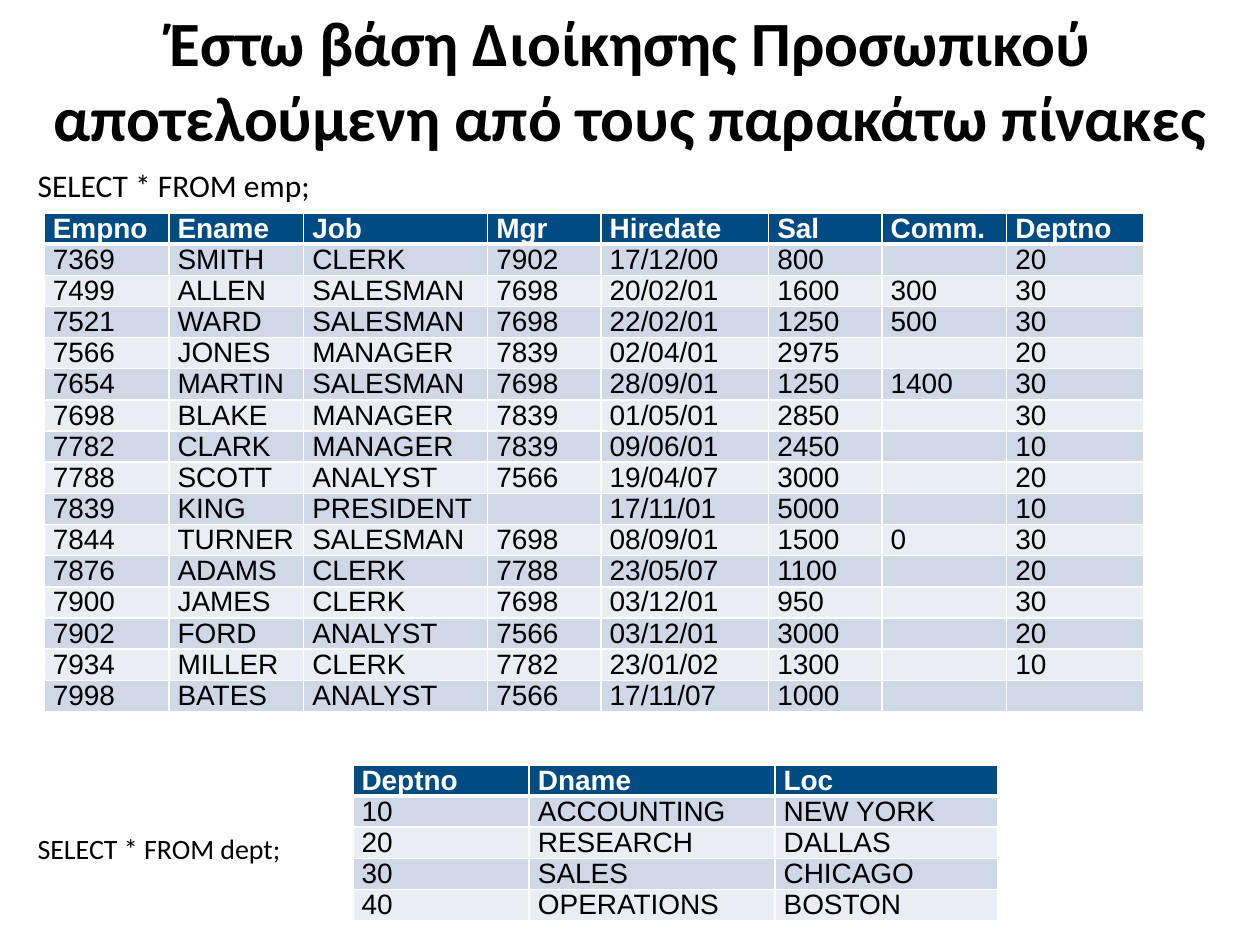
from lxml import etree
from pptx import Presentation
from pptx.dml.color import RGBColor
from pptx.enum.text import MSO_ANCHOR, PP_ALIGN
from pptx.oxml.ns import qn
from pptx.util import Inches, Pt

MIDDLE = MSO_ANCHOR.MIDDLE
CENTER = PP_ALIGN.CENTER
BLACK = RGBColor(0x00, 0x00, 0x00)
WHITE = RGBColor(0xFF, 0xFF, 0xFF)
NAVY = RGBColor(0x00, 0x4B, 0x82)
BANDS = RGBColor(0xE9, 0xED, 0xF4), RGBColor(0xD0, 0xD8, 0xE8)
WIDTH, HEIGHT = Inches(10), Inches(7.5)
ROW = Inches(0.24)
SIZE = Pt(16)

TITLE = "Έστω βάση Διοίκησης Προσωπικού αποτελούμενη από τους παρακάτω πίνακες"
EMP_COLS = 0.99, 1.07, 1.46, 0.9, 1.33, 0.9, 0.99, 1.09
EMP = """Empno,Ename,Job,Mgr,Hiredate,Sal,Comm.,Deptno
7369,SMITH,CLERK,7902,17/12/00,800,,20
7499,ALLEN,SALESMAN,7698,20/02/01,1600,300,30
7521,WARD,SALESMAN,7698,22/02/01,1250,500,30
7566,JONES,MANAGER,7839,02/04/01,2975,,20
7654,MARTIN,SALESMAN,7698,28/09/01,1250,1400,30
7698,BLAKE,MANAGER,7839,01/05/01,2850,,30
7782,CLARK,MANAGER,7839,09/06/01,2450,,10
7788,SCOTT,ANALYST,7566,19/04/07,3000,,20
7839,KING,PRESIDENT,,17/11/01,5000,,10
7844,TURNER,SALESMAN,7698,08/09/01,1500,0,30
7876,ADAMS,CLERK,7788,23/05/07,1100,,20
7900,JAMES,CLERK,7698,03/12/01,950,,30
7902,FORD,ANALYST,7566,03/12/01,3000,,20
7934,MILLER,CLERK,7782,23/01/02,1300,,10
7998,BATES,ANALYST,7566,17/11/07,1000,,"""
DEPT_COLS = 1.4, 1.95, 1.77
DEPT = """Deptno,Dname,Loc
10,ACCOUNTING,NEW YORK
20,RESEARCH,DALLAS
30,SALES,CHICAGO
40,OPERATIONS,BOSTON"""


def set_font(para, name, size, color, bold=False):
    font = para.font
    font.name, font.size, font.bold = name, size, bold
    font.color.rgb = color


def add_title(slide):
    title = slide.shapes.title
    title.left, title.top = 0, Inches(0.13)
    title.width, title.height = WIDTH, Inches(0.99)
    frame = title.text_frame
    frame.text = TITLE
    frame.word_wrap = True
    frame.vertical_anchor = MIDDLE
    para = frame.paragraphs[0]
    para.alignment = CENTER
    set_font(para, "Calibri", Pt(36), BLACK, True)


def add_label(slide, text, top, width, height, size, wrap):
    box = slide.shapes.add_textbox(
        Inches(0.2), Inches(top), Inches(width), Inches(height))
    frame = box.text_frame
    frame.text = text
    frame.word_wrap = wrap
    set_font(frame.paragraphs[0], "Calibri", Pt(size), BLACK)


def add_edges(cell, row):
    props = cell._tc.get_or_add_tcPr()
    top, bottom = (3 if row == 1 else 1), (3 if row == 0 else 1)
    for side, width in zip(("lnL", "lnR", "lnT", "lnB"), (1, 1, top, bottom)):
        line = etree.SubElement(props, qn(f"a:{side}"), w=str(Pt(width)))
        fill = etree.SubElement(line, qn("a:solidFill"))
        etree.SubElement(fill, qn("a:srgbClr"), val=str(WHITE))


def fill_cell(cell, text, row):
    head = row == 0
    cell.text = text
    cell.margin_left = cell.margin_right = Inches(0.07)
    cell.margin_top = cell.margin_bottom = 0
    add_edges(cell, row)
    cell.fill.solid()
    cell.fill.fore_color.rgb = NAVY if head else BANDS[row % 2]
    para = cell.text_frame.paragraphs[0]
    set_font(para, "Arial", SIZE, WHITE if head else BLACK, head)
    if not text:
        end = etree.SubElement(para._p, qn("a:endParaRPr"), sz="1600")
        etree.SubElement(end, qn("a:latin"), typeface="Arial")


def add_grid(slide, left, top, cols, data):
    rows = [line.split(",") for line in data.splitlines()]
    table = slide.shapes.add_table(
        len(rows), len(cols), Inches(left), Inches(top),
        Inches(sum(cols)), ROW * len(rows)).table
    for col, width in zip(table.columns, cols):
        col.width = Inches(width)
    for r, row in enumerate(rows):
        table.rows[r].height = ROW
        for c, text in enumerate(row):
            fill_cell(table.cell(r, c), text, r)


def main():
    deck = Presentation()
    deck.slide_width, deck.slide_height = WIDTH, HEIGHT
    slide = deck.slides.add_slide(deck.slide_layouts[5])
    add_title(slide)
    add_grid(slide, 0.35, 1.69, EMP_COLS, EMP)
    add_grid(slide, 2.8, 6.07, DEPT_COLS, DEPT)
    add_label(slide, "SELECT * FROM emp;", 1.27, 2.92, 0.4, 18, True)
    add_label(slide, "SELECT * FROM dept;", 6.55, 2.16, 0.37, 16, False)
    deck.save("out.pptx")


if __name__ == "__main__":
    main()
